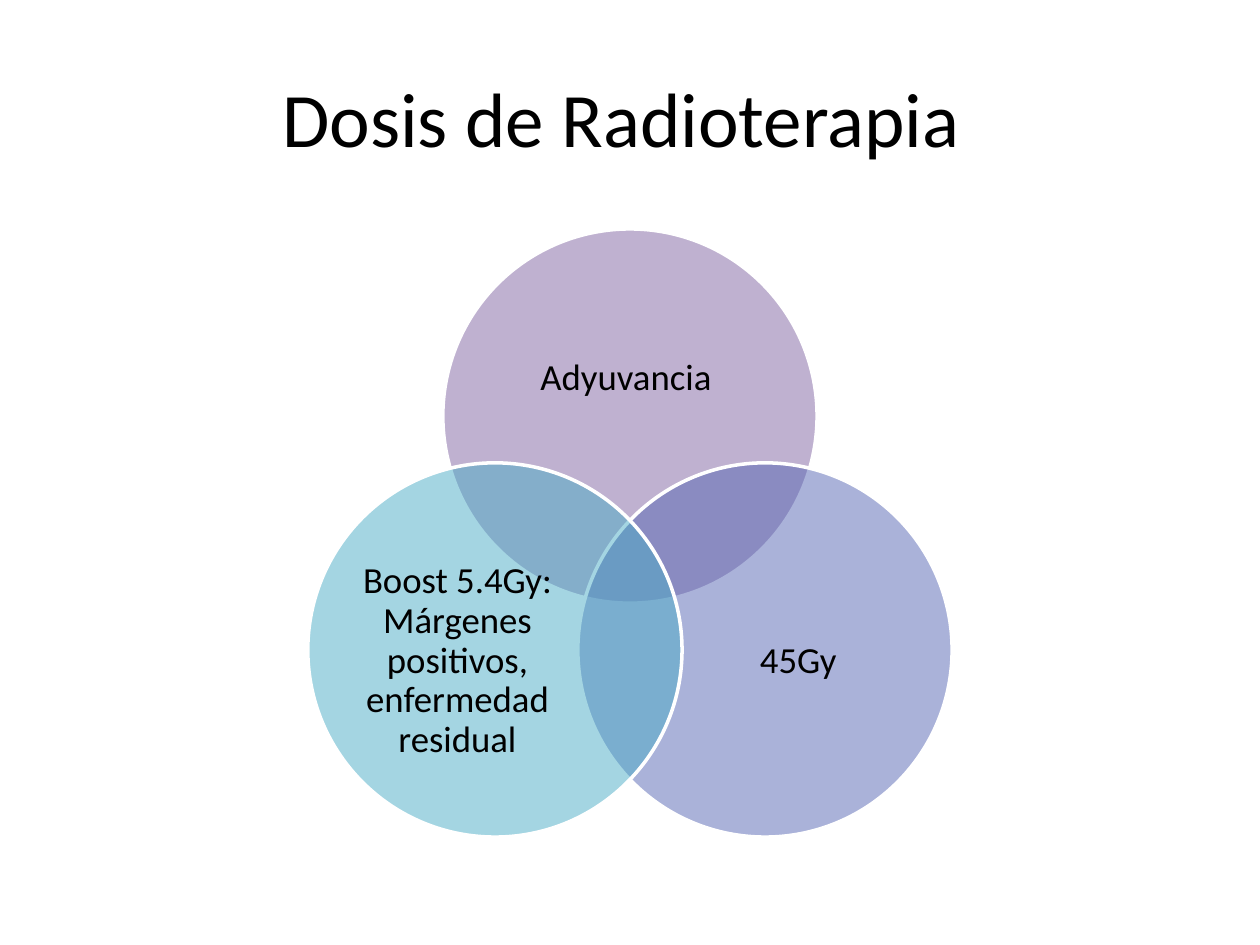
import math
from lxml import etree
from pptx import Presentation, util as u
from pptx.dml.color import RGBColor
from pptx.enum import shapes, text
from pptx.oxml.ns import qn


def color(fmt, value):
    fmt.solid()
    fmt.fore_color.rgb = RGBColor.from_string(value)


def add_text(slide, cx, cy, w, h, words, size, spacing):
    s = slide.shapes.add_textbox(*[u.Inches(v) for v in (cx - w / 2, cy - h / 2, w, h)])
    tf = s.text_frame
    frame = dict(word_wrap=True, vertical_anchor=text.MSO_ANCHOR.MIDDLE, margin_left=0,
                 margin_right=0, margin_top=0, margin_bottom=0)
    for key, value in frame.items():
        setattr(tf, key, value)
    p = tf.paragraphs[0]
    p.alignment = text.PP_ALIGN.CENTER
    p.line_spacing = spacing
    r = p.add_run()
    r.text = words
    for key, value in dict(name="Calibri", size=u.Pt(size)).items():
        setattr(r.font, key, value)
    color(r.font.fill, "000000")


W, H = 10, 7.5
prs = Presentation()
prs.slide_width, prs.slide_height = u.Inches(W), u.Inches(H)
slide = prs.slides.add_slide(prs.slide_layouts[6])

add_text(slide, W / 2, 0.925, 0.9 * W, H / 6, "Dosis de Radioterapia ", 44, 1.0)

D = 2.97
orbit = D / 2.4
mid_x, mid_y = W / 2, 4.54
circles = [
    (-90, "8064A2", "Adyuvancia ", 0, -0.1, 0.73, 0.45),
    (30, "5767B4", "45Gy ", 0.1, 0.03, 0.6, 0.55),
    (150, "4BACC6", "Boost 5.4Gy: Márgenes positivos, enfermedad residual", -0.1, 0.03, 0.6, 0.55),
]
for angle, fill, words, dx, dy, w, h in circles:
    cx = mid_x + orbit * math.cos(math.radians(angle))
    cy = mid_y + orbit * math.sin(math.radians(angle))
    s = slide.shapes.add_shape(shapes.MSO_SHAPE.OVAL,
                               *[u.Inches(v) for v in (cx - D / 2, cy - D / 2, D, D)])
    s.shadow.inherit = False
    color(s.fill, fill)
    clr = s.fill._xPr.find(qn("a:solidFill"))[0]
    etree.SubElement(clr, qn("a:alpha"), val="50000")
    color(s.line.fill, "FFFFFF")
    s.line.width = u.Pt(2)
    add_text(slide, cx + dx * D, cy + dy * D, w * D, h * D, words, 21, 0.9)

prs.save("out.pptx")
